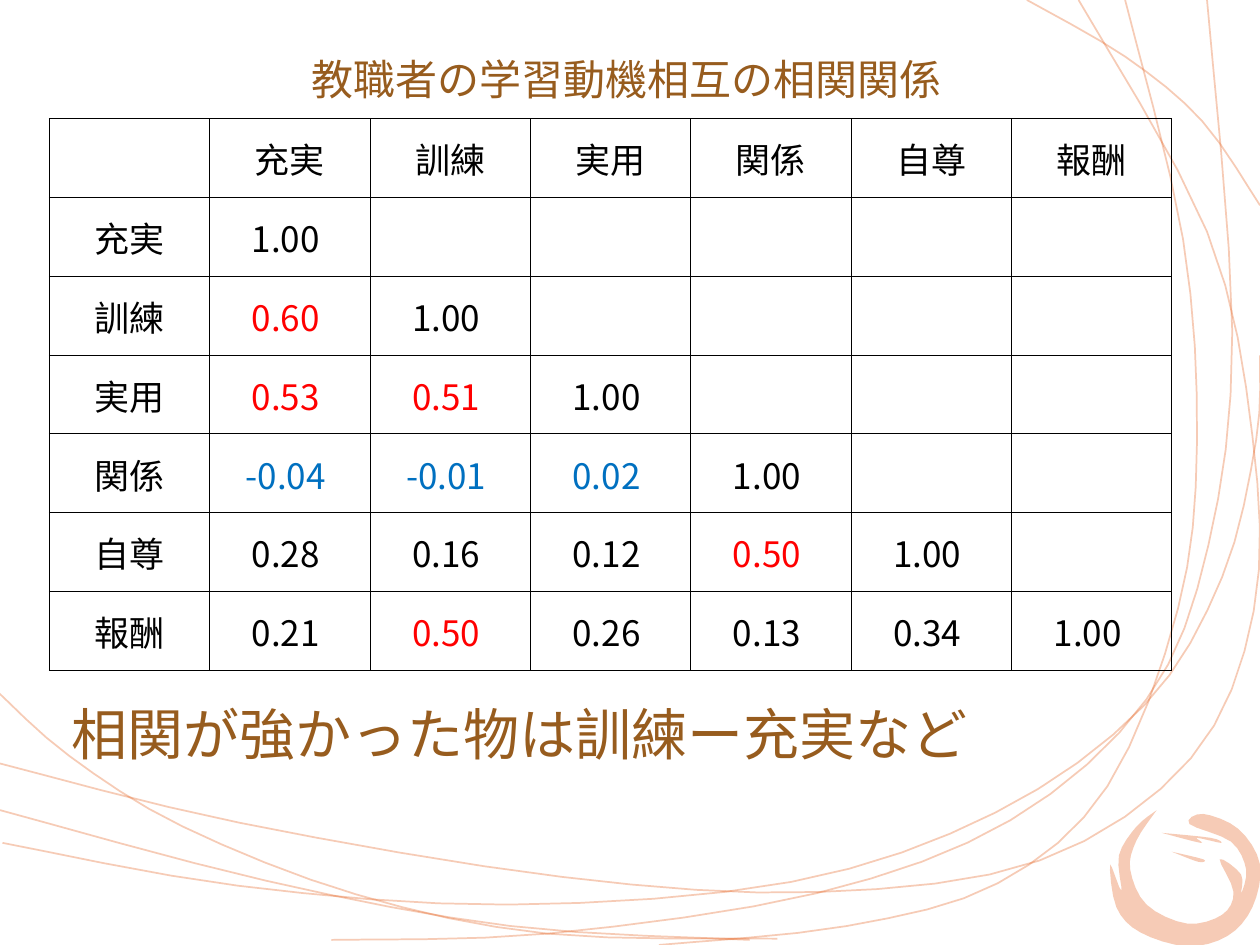
from lxml.etree import SubElement
from pptx import Presentation
from pptx.dml.color import RGBColor
from pptx.enum.text import MSO_ANCHOR, PP_ALIGN
from pptx.oxml.ns import qn
from pptx.util import Inches, Pt

ORANGE, BROWN, BLACK, RED, BLUE = "E3560E", "975C1E", "000000", "FF0000", "0070C0"
CJK = "Noto Sans CJK JP"


def paint(fill, color, opacity=100):
    fill.solid()
    fill.fore_color.rgb = RGBColor.from_string(color)
    if opacity < 100:
        tint = fill._xPr.find(".//" + qn("a:srgbClr"))
        SubElement(tint, qn("a:alpha"), val=str(opacity * 1000))


def write(frame, text, size=20, color=BLACK, font=CJK, align=PP_ALIGN.CENTER):
    paragraph = frame.paragraphs[0]
    paragraph.alignment = align
    run = paragraph.add_run()
    run.text = text
    run.font.size = Pt(size)
    run.font.name = font
    paint(run.font.fill, color)
    SubElement(run.font._element, qn("a:ea"), typeface=CJK)


presentation = Presentation()
presentation.slide_width = Inches(10)
presentation.slide_height = Inches(7.5)
slide = presentation.slides.add_slide(presentation.slide_layouts[5])

strands = [
    [(-0.03, 5.48), (0.55, 6), (1.45, 6.56), (2.83, 7.1), (4.34, 7.41), (6.17, 7.45)],
    [(5.23, 7.5), (6.72, 7.35), (7.92, 7.01), (8.79, 6.24), (9.35, 4.83), (9.5, 3.52),
     (9.39, 1.9), (8.93, 0)],
    [(0, 6.06), (1.9, 6.53), (4.46, 6.96), (6.49, 7.08), (8.25, 6.83), (9.45, 6.02),
     (9.95, 4.85), (9.94, 3.46), (9.58, 1.84), (8.56, 0)],
    [(0.02, 6.69), (1.89, 7.03), (4.03, 7.18), (6.28, 7), (7.9, 6.45), (9.08, 5.6),
     (9.7, 4.58), (9.97, 3.49), (10, 2.82)],
    [(2.63, 7.46), (4.35, 7.41), (6.48, 7.09), (8.02, 6.51), (9.1, 5.55), (9.59, 4.33),
     (9.78, 2.63), (9.58, 0)],
    [(8.15, 0), (8.93, 0.45), (9.54, 0.96), (10, 1.63)],
    [(0, 6.43), (2.11, 6.99), (4.05, 7.35), (5.95, 7.46)],
]
brush_marks = [
    [(9.18, 6.43), (9.02, 6.67), (8.97, 6.9), (9.1, 7.18), (9.42, 7.33), (9.7, 7.26),
     (9.79, 7.08), (9.68, 6.82), (9.85, 6.94), (9.85, 7.09), (9.89, 6.9), (9.77, 6.68),
     (9.44, 6.54), (9.55, 6.46), (9.83, 6.58), (10, 6.86), (9.94, 7.2), (9.74, 7.43),
     (9.42, 7.51), (9.05, 7.4), (8.86, 7.2), (8.81, 6.86), (8.9, 7.07), (8.88, 6.79),
     (9.02, 6.56), (9.18, 6.43)],
    [(9.22, 6.61), (9.61, 6.65), (9.69, 6.69), (9.5, 6.65), (9.53, 6.69), (9.22, 6.61)],
    [(9.3, 6.76), (9.55, 6.82), (9.51, 6.84), (9.3, 6.76)],
]
STEPS = 4
for outlines, closed in ((strands, False), (brush_marks, True)):
    for knots in outlines:
        padded = [knots[0], *knots, knots[-1]]
        curve = []
        for before, start, end, after in zip(padded, padded[1:], padded[2:], padded[3:]):
            for step in range(1, STEPS + 1):
                t = step / STEPS
                curve.append([
                    Inches(b + ((c - a) * t + (2 * a - 5 * b + 4 * c - d) * t**2
                                + (3 * b - a - 3 * c + d) * t**3) / 2)
                    for a, b, c, d in zip(before, start, end, after)
                ])
        builder = slide.shapes.build_freeform(*map(Inches, knots[0]))
        builder.add_line_segments(curve, close=closed)
        ornament = builder.convert_to_shape()
        ornament.shadow.inherit = False
        if closed:
            paint(ornament.fill, ORANGE, opacity=30)
            ornament.line.fill.background()
        else:
            ornament.fill.background()
            ornament.line.width = Pt(1)
            paint(ornament.line.fill, ORANGE, opacity=29)

heading = slide.shapes.title
heading.left, heading.top = Inches(0.47), Inches(0)
heading.width, heading.height = Inches(9), Inches(1.25)
heading.text_frame.vertical_anchor = MSO_ANCHOR.MIDDLE
write(heading.text_frame, "教職者の学習動機相互の相関関係", size=24, color=BROWN, font="Calibri")

finding = slide.shapes.add_textbox(Inches(0.47), Inches(5.55), Inches(9), Inches(2.28)).text_frame
finding.word_wrap = True
finding.margin_top = 0
write(finding, "相関が強かった物は訓練ー充実など", size=32, color=BROWN, font="Calibri",
      align=PP_ALIGN.LEFT)

motives = ["充実", "訓練", "実用", "関係", "自尊", "報酬"]
correlations = [
    [1.00],
    [0.60, 1.00],
    [0.53, 0.51, 1.00],
    [-0.04, -0.01, 0.02, 1.00],
    [0.28, 0.16, 0.12, 0.50, 1.00],
    [0.21, 0.50, 0.26, 0.13, 0.34, 1.00],
]
count = len(motives) + 1
matrix = slide.shapes.add_table(count, count, Inches(0.39), Inches(0.94),
                                Inches(8.91), Inches(4.38)).table
matrix.first_row = matrix.horz_banding = False
for cell in matrix.iter_cells():
    cell.vertical_anchor = MSO_ANCHOR.MIDDLE
    cell.margin_left = cell.margin_right = cell.margin_top = Inches(0.01)
    cell.margin_bottom = 0
    for side in ("lnL", "lnR", "lnT", "lnB"):
        border = SubElement(cell._tc.get_or_add_tcPr(), qn("a:" + side), w=str(Pt(0.5)))
        SubElement(SubElement(border, qn("a:solidFill")), qn("a:srgbClr"), val=BLACK)
    cell.fill.background()

for row, (motive, values) in enumerate(zip(motives, correlations), start=1):
    write(matrix.cell(0, row).text_frame, motive)
    write(matrix.cell(row, 0).text_frame, motive)
    for column, value in enumerate(values, start=1):
        color = RED if 0.5 <= value < 1 else BLUE if abs(value) < 0.05 else BLACK
        write(matrix.cell(row, column).text_frame, f"{value:.2f} ", color=color)

presentation.save("out.pptx")
